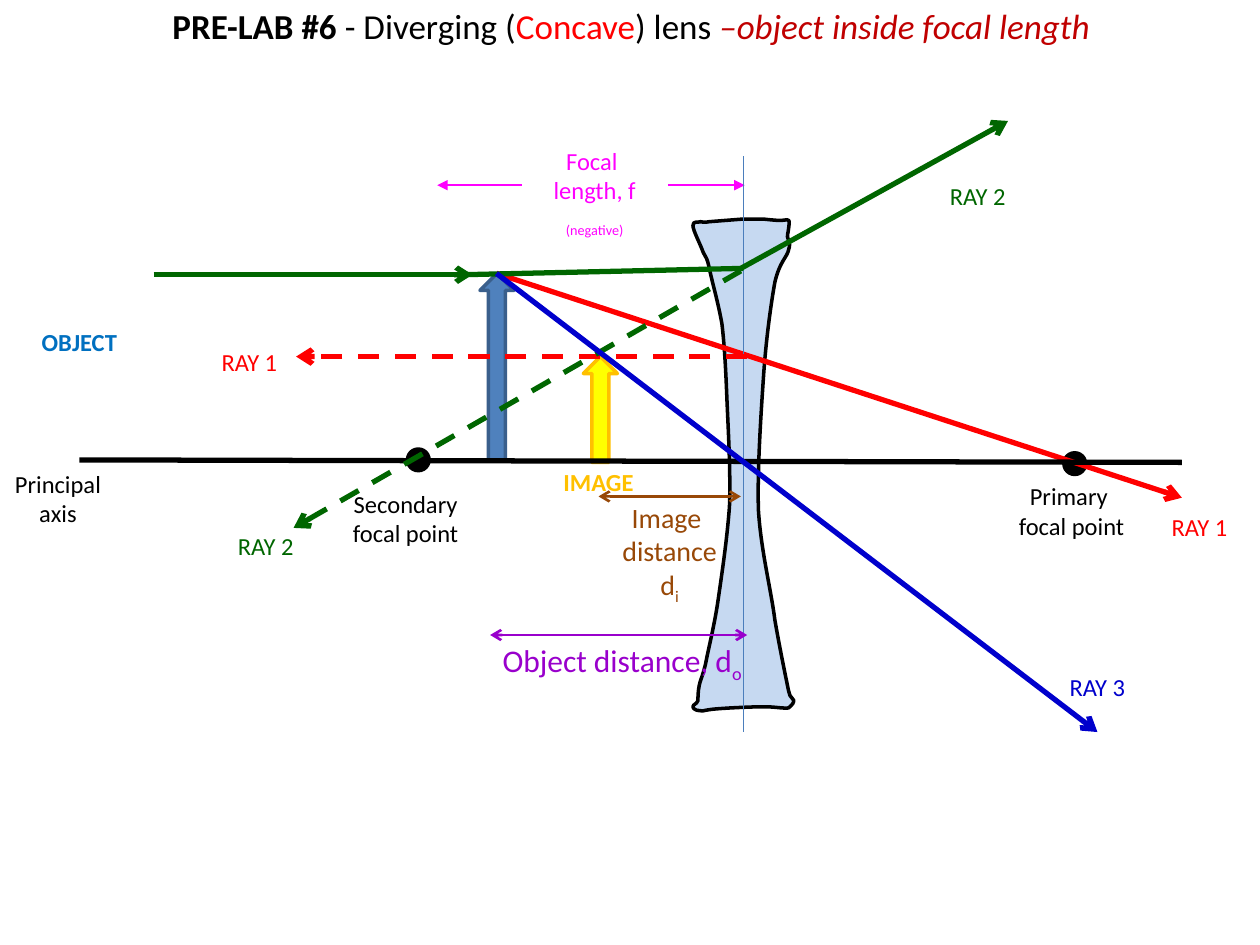
import pptx
import pptx.util
import pptx.dml.color
import pptx.enum.dml
import pptx.enum.shapes
import pptx.enum.text
import pptx.oxml
import pptx.oxml.ns

PX = 9144  # one px is a hundredth of an inch
FONT = "Calibri"
RED, GREEN, BLUE, BLACK = "FF0000", "006600", "0000CC", "000000"
PINK, BROWN, PURPLE, GOLD = "FF00FF", "984807", "9900CC", "FFC000"

# Title runs: text, colour, extra format
TITLE = [
    ("PRE-LAB #6", BLACK, {"bold": True}),
    (" - Diverging (", BLACK, {}),
    ("Concave", RED, {}),
    (") lens ", BLACK, {}),
    ("–object inside focal length", "C00000", {"italic": True}),
]

# Preset shapes: kind, box, fill, line
ARROWS = [
    ("UP_ARROW", (381, 217, 27, 149), "4F81BD", "3A5F8C"),
    ("UP_ARROW", (463, 283, 27, 84), "FFFF00", GOLD),
]
DOTS = [
    ("OVAL", (322, 355, 20, 20), BLACK, None),
    ("OVAL", (843, 358, 20, 20), BLACK, None),
]

# Lens outline: start, then an end for a line, two handles and an end for a curve
START = (588, 174)
LENS = [
    (563, 176), (558, 177, 558, 176, 556, 176),
    (554, 177, 550, 175, 550, 179), (550, 183, 556, 194, 558, 200),
    (561, 206, 561, 204, 563, 213), (565, 223, 570, 240, 573, 257),
    (575, 274, 576, 292, 577, 317), (578, 341, 580, 376, 579, 402),
    (577, 429, 573, 455, 570, 476), (567, 497, 562, 516, 560, 527),
    (557, 539, 556, 539, 555, 544), (554, 549, 554, 553, 554, 556),
    (553, 559, 550, 559, 550, 561), (550, 562, 552, 564, 555, 564),
    (557, 565, 557, 564, 565, 563), (574, 562, 596, 561, 606, 561),
    (615, 561, 619, 562, 623, 562), (626, 562, 626, 562, 627, 561),
    (629, 560, 630, 557, 630, 556), (630, 555, 628, 554, 627, 552),
    (627, 550, 627, 554, 625, 544), (623, 534, 619, 515, 615, 492),
    (612, 468, 604, 437, 602, 405), (601, 373, 604, 329, 606, 299),
    (608, 269, 612, 241, 615, 224), (619, 207, 625, 204, 626, 198),
    (628, 192, 625, 191, 625, 188), (625, 185, 626, 183, 626, 181),
    (626, 179, 627, 176, 626, 175), (625, 174, 622, 175, 619, 175),
    (616, 175, 607, 174, 607, 174), START,
]

# Lines: from and to, colour, width, head, tail, dashed
LINES = [
    ((414, 147, 347, 147), PINK, 1.5, None, "triangle", False),
    ((530, 147, 591, 147), PINK, 1.5, None, "triangle", False),
    ((394, 217, 938, 395), RED, 3, None, "arrow", False),
    ((590, 124, 590, 581), "4B7EBC", 0.75, None, None, False),
    ((938, 367, 63, 365), BLACK, 3, None, None, False),
    ((122, 218, 375, 218), GREEN, 3, None, "arrow", False),
    ((588, 213, 800, 96), GREEN, 3, None, "arrow", False),
    ((593, 283, 235, 283), RED, 3, None, "arrow", True),
    ((369, 218, 590, 213), GREEN, 3, None, None, False),
    ((233, 419, 588, 215), GREEN, 3, "arrow", None, True),
    ((394, 217, 871, 581), BLUE, 3, None, "arrow", False),
    ((593, 504, 389, 504), PURPLE, 1.5, "arrow", "arrow", False),
    ((475, 394, 588, 394), BROWN, 1.5, "arrow", "arrow", False),
]

# Labels: text (one string per paragraph), box, colour, bold
LABELS = [
    (["OBJECT"], (17, 249, 92, 34), "0070C0", True),
    (["IMAGE"], (429, 360, 92, 34), GOLD, True),
    (["Primary ", "focal point"], (776, 372, 149, 57), BLACK, False),
    (["Secondary focal point"], (276, 378, 92, 57), BLACK, False),
    (["Principal axis"], (0, 362, 92, 57), BLACK, False),
    (["RAY 1"], (914, 396, 76, 34), RED, False),
    (["RAY 1"], (160, 265, 76, 34), RED, False),
    (["RAY 2"], (738, 133, 76, 34), GREEN, False),
    (["RAY 2"], (173, 411, 76, 34), GREEN, False),
    (["RAY 3"], (833, 523, 76, 34), BLUE, False),
]

# Distances: paragraphs of (normal, lowered) text, box, colour, size, align
SPANS = [
    ([("Focal ", ""), ("length, f", ""), ("", "(negative)")],
     (414, 111, 116, 73), PINK, 14, "CENTER"),
    ([("Object distance, d", "o")], (389, 504, 213, 40), PURPLE, 18, "LEFT"),
    ([("Image ", ""), ("distance d", "i")],
     (480, 392, 103, 91), BROWN, 16, "CENTER"),
]


def px(*nums):
    return [pptx.util.Emu(n * PX) for n in nums]


def rgb(code):
    return pptx.dml.color.RGBColor.from_string(code)


def put(item, form):
    for key, val in form.items():
        setattr(item, key, val)


def paint(shape, fill, line, wide=2):
    shape.shadow.inherit = False
    shape.fill.solid()
    shape.fill.fore_color.rgb = rgb(fill)
    if line:
        shape.line.color.rgb = rgb(line)
        shape.line.width = pptx.util.Pt(wide)
    else:
        shape.line.fill.background()


def child(node, tag, **attrs):
    part = pptx.oxml.parse_xml(
        f'<a:{tag} xmlns:a="http://schemas.openxmlformats.org/drawingml/2006/main"/>')
    for key, val in attrs.items():
        part.set(key, str(val))
    node.append(part)


def write(para, text, color, size, low=False, **form):
    run = para.add_run()
    run.text = text
    put(run.font, {"name": FONT, "size": pptx.util.Pt(size), **form})
    run.font.color.rgb = rgb(color)
    if low:
        run.font._element.set("baseline", "-25000")


def rows(frame, count):
    return [frame.paragraphs[0]] + [frame.add_paragraph() for _ in range(count - 1)]


def draw(slide, items):
    for kind, box, fill, line in items:
        shape = slide.shapes.add_shape(
            getattr(pptx.enum.shapes.MSO_SHAPE, kind), *px(*box))
        paint(shape, fill, line)


def trace(slide, start, parts):
    pen = slide.shapes.build_freeform(*px(*start), scale=1.0)
    pen.add_line_segments([px(*part[-2:]) for part in parts], close=True)
    shape = pen.convert_to_shape()
    legs = list(shape._element.iter(pptx.oxml.ns.qn("a:lnTo")))
    for leg, part in zip(legs, parts):
        if len(part) == 6:  # bend the straight leg
            leg.tag = pptx.oxml.ns.qn("a:cubicBezTo")
            leg.remove(leg[0])
            nums = px(*part)
            for x, y in zip(nums[::2], nums[1::2]):
                child(leg, "pt", x=x - shape.left, y=y - shape.top)
    return shape


def link(slide, ends, color, wide, head, tail, dash):
    line = slide.shapes.add_connector(
        pptx.enum.shapes.MSO_CONNECTOR.STRAIGHT, *px(*ends))
    line.line.color.rgb = rgb(color)
    line.line.width = pptx.util.Pt(wide)
    if dash:
        line.line.dash_style = pptx.enum.dml.MSO_LINE.DASH
    for tag, kind in (("headEnd", head), ("tailEnd", tail)):
        if kind:
            child(line.line._get_or_add_ln(), tag, type=kind)
    child(line._element.spPr, "effectLst")


def main():
    deck = pptx.Presentation()
    deck.slide_width, deck.slide_height = px(1000, 750)
    slide = deck.slides.add_slide(deck.slide_layouts[5])
    align = pptx.enum.text.PP_ALIGN
    middle = pptx.enum.text.MSO_ANCHOR.MIDDLE

    # Title
    title = slide.shapes.title
    put(title, dict(zip(("left", "top", "width", "height"), px(1, 0, 1000, 41))))
    put(title.text_frame, {"vertical_anchor": middle, "word_wrap": True,
                           "auto_size": pptx.enum.text.MSO_AUTO_SIZE.NONE})
    head = title.text_frame.paragraphs[0]
    head.alignment = align.CENTER
    for text, color, form in TITLE:
        write(head, text, color, 20, **form)

    # Object, image, lens, focal points and rays
    draw(slide, ARROWS)
    paint(trace(slide, START, LENS), "C6D9F1", BLACK)
    draw(slide, DOTS)
    for item in LINES:
        link(slide, *item)

    # Labels
    for lines, box, color, bold in LABELS:
        frame = slide.shapes.add_textbox(*px(*box)).text_frame
        put(frame, {"word_wrap": True, "vertical_anchor": middle,
                    "margin_left": 0, "margin_right": 0, "margin_bottom": 0,
                    "margin_top": px(10)[0]})
        for para, text in zip(rows(frame, len(lines)), lines):
            para.alignment = align.CENTER
            write(para, text, color, 14, bold=bold)

    # Distances
    for lines, box, color, size, side in SPANS:
        frame = slide.shapes.add_textbox(*px(*box)).text_frame
        frame.word_wrap = True
        for para, pair in zip(rows(frame, len(lines)), lines):
            para.alignment = getattr(align, side)
            for text, low in zip(pair, (False, True)):
                if text:
                    write(para, text, color, size, low)

    deck.save("out.pptx")


if __name__ == "__main__":
    main()
